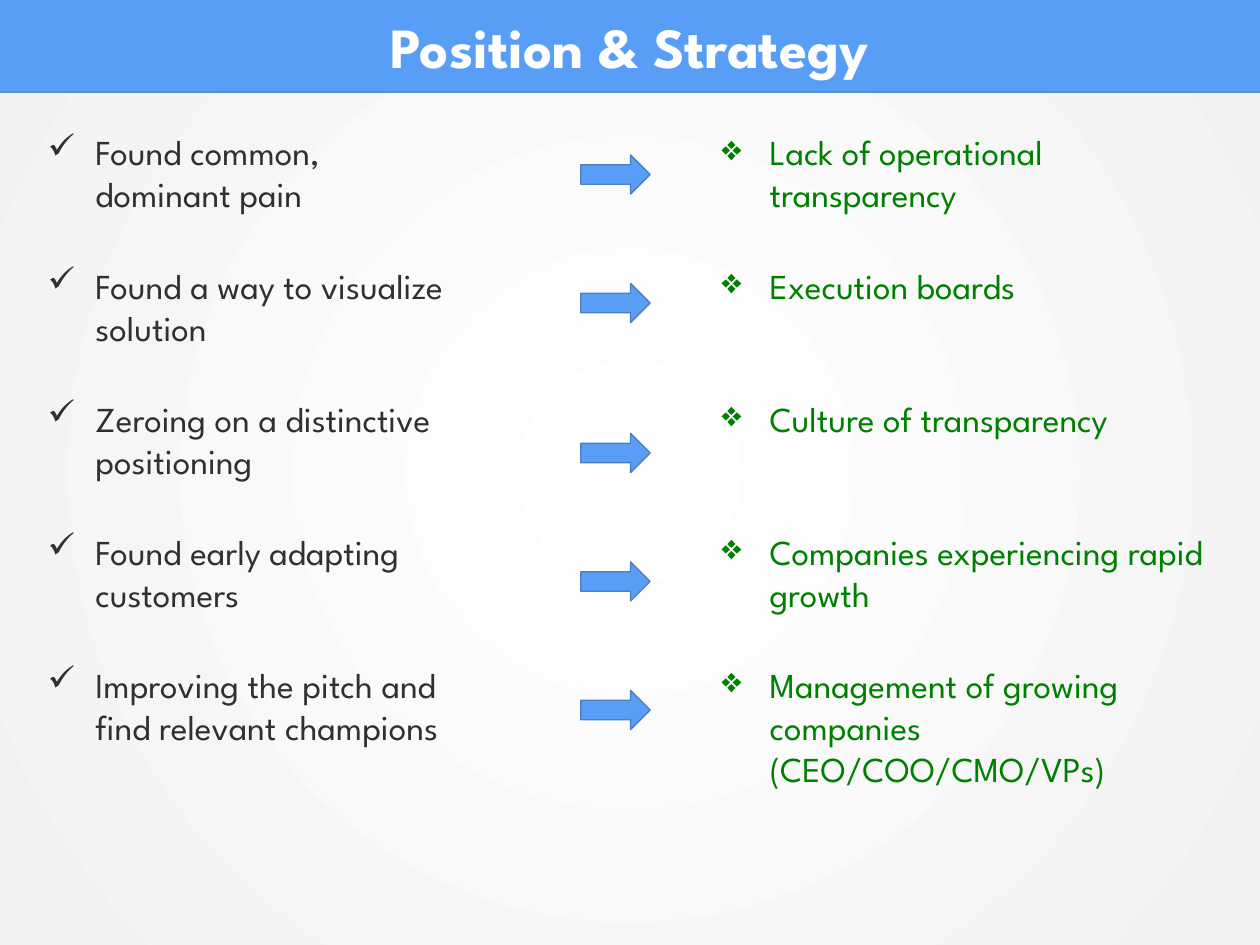
import dataclasses

import pptx
import pptx.dml.color
import pptx.enum.shapes
import pptx.enum.text
import pptx.oxml
import pptx.oxml.ns
import pptx.util
from lxml import etree

SHAPE = pptx.enum.shapes.MSO_SHAPE
qn = pptx.oxml.ns.qn


@dataclasses.dataclass(frozen=True)
class Theme:
    font: str = "League Spartan"
    accent: str = "589DF6"
    header_rule: str = "528FD3"
    arrow_edge: str = "4B7EBC"
    white: str = "FFFFFF"
    backdrop_edge: str = "F2F2F2"
    body: str = "303030"
    answer: str = "008000"
    title_size: float = 32.4
    body_size: float = 20
    line_height: float = 24
    item_gap: float = 4
    hairline: float = 0.75


def rgb(value):
    return pptx.dml.color.RGBColor.from_string(value)


class SlideBuilder:
    """Places elements on a grid of 10 columns by 7.5 rows."""

    COLUMNS, ROWS = 10, 7.5

    def __init__(self, deck, theme):
        self.theme = theme
        self.page = deck.slides.add_slide(deck.slide_layouts[6])
        self.column = deck.slide_width / self.COLUMNS
        self.row = deck.slide_height / self.ROWS

    def place(self, left, top, width, height):
        return [int(left * self.column), int(top * self.row),
                int(width * self.column), int(height * self.row)]

    def radial_background(self, centre, edge):
        fill = self.page.background.fill
        fill.gradient()
        for stop, color, position in zip(fill.gradient_stops, (centre, edge), (0, 1)):
            stop.color.rgb = rgb(color)
            stop.position = position
        gradient = self.page._element.find(".//" + qn("a:gradFill"))
        gradient.remove(gradient.find(qn("a:lin")))
        circle = etree.SubElement(gradient, qn("a:path"), path="circle")
        etree.SubElement(circle, qn("a:fillToRect"),
                         dict.fromkeys("ltrb", "50000"))

    def shape(self, kind, area, fill, edge=None):
        shape = self.page.shapes.add_shape(kind, *self.place(*area))
        shape.shadow.inherit = False
        shape.fill.solid()
        shape.fill.fore_color.rgb = rgb(fill)
        if edge:
            shape.line.color.rgb = rgb(edge)
            shape.line.width = pptx.util.Pt(self.theme.hairline)
        else:
            shape.line.fill.background()

    def rule(self, top, color):
        left, top, width, _ = self.place(0, top, self.COLUMNS, 0)
        line = self.page.shapes.add_connector(
            pptx.enum.shapes.MSO_CONNECTOR.STRAIGHT, left, top, left + width, top)
        line.line.color.rgb = rgb(color)
        line.line.width = pptx.util.Pt(self.theme.hairline)
        etree.SubElement(line._element.spPr, qn("a:effectLst"))

    def text_frame(self, area):
        frame = self.page.shapes.add_textbox(*self.place(*area)).text_frame
        frame.word_wrap = True
        return frame

    def style(self, para, size, color, bold=False):
        para.font.name = self.theme.font
        para.font.size = pptx.util.Pt(size)
        para.font.color.rgb = rgb(color)
        para.font.bold = bold

    def title(self, text, area):
        frame = self.text_frame(area)
        frame.vertical_anchor = pptx.enum.text.MSO_ANCHOR.MIDDLE
        para = frame.paragraphs[0]
        para.text = text
        para.alignment = pptx.enum.text.PP_ALIGN.CENTER
        self.style(para, self.theme.title_size, self.theme.white, bold=True)

    def bullet_list(self, items, area, bullet, color):
        """Each item is its text and the number of empty lines kept below it."""
        frame = self.text_frame(area)
        indent = int(0.38 * self.column)
        for index, (text, lines_below) in enumerate(items):
            para = frame.add_paragraph() if index else frame.paragraphs[0]
            para.text = text
            para.space_before = pptx.util.Pt(self.theme.item_gap)
            para.space_after = pptx.util.Pt(lines_below * self.theme.line_height)
            properties = para._p.get_or_add_pPr()
            properties.set("marL", str(indent))
            properties.set("indent", str(-indent))
            etree.SubElement(properties, qn("a:buChar"), char=bullet)
            self.style(para, self.theme.body_size, color)


def main():
    deck = pptx.Presentation()
    deck.slide_width = pptx.util.Inches(10)
    deck.slide_height = pptx.util.Inches(7.5)
    theme = Theme()
    slide = SlideBuilder(deck, theme)

    slide.radial_background(theme.white, theme.backdrop_edge)
    header_height = 0.73
    slide.shape(SHAPE.RECTANGLE, (0, 0, slide.COLUMNS, header_height), theme.accent)
    slide.rule(header_height, theme.header_rule)
    slide.title("Position & Strategy", (0.5, 0.05, 9, 0.63))

    achievements = [
        ("Found common,\vdominant pain", 1),
        ("Found a way to visualize\vsolution", 1),
        ("Zeroing on a distinctive\vpositioning", 1),
        ("Found early adapting\vcustomers", 1),
        ("Improving the pitch and\vfind relevant champions", 0),
    ]
    outcomes = [
        ("Lack of operational transparency", 1),
        ("Execution boards", 2),
        ("Culture of transparency", 2),
        ("Companies experiencing rapid growth", 1),
        ("Management of growing companies (CEO/COO/CMO/VPs)", 0),
    ]
    list_top, list_width, list_height = 0.99, 4.17, 5.98
    for items, left, bullet, color in (
        (achievements, 0.28, "✓", theme.body),
        (outcomes, 5.63, "❖", theme.answer),
    ):
        slide.bullet_list(items, (left, list_top, list_width, list_height), bullet, color)

    first_arrow, arrow_step, lower_group_shift = 1.23, 1.02, 0.17
    for index in range(len(achievements)):
        top = first_arrow + index * arrow_step + (lower_group_shift if index > 1 else 0)
        slide.shape(SHAPE.RIGHT_ARROW, (4.61, top, 0.55, 0.31),
                    theme.accent, theme.arrow_edge)

    deck.save("out.pptx")


if __name__ == "__main__":
    main()
